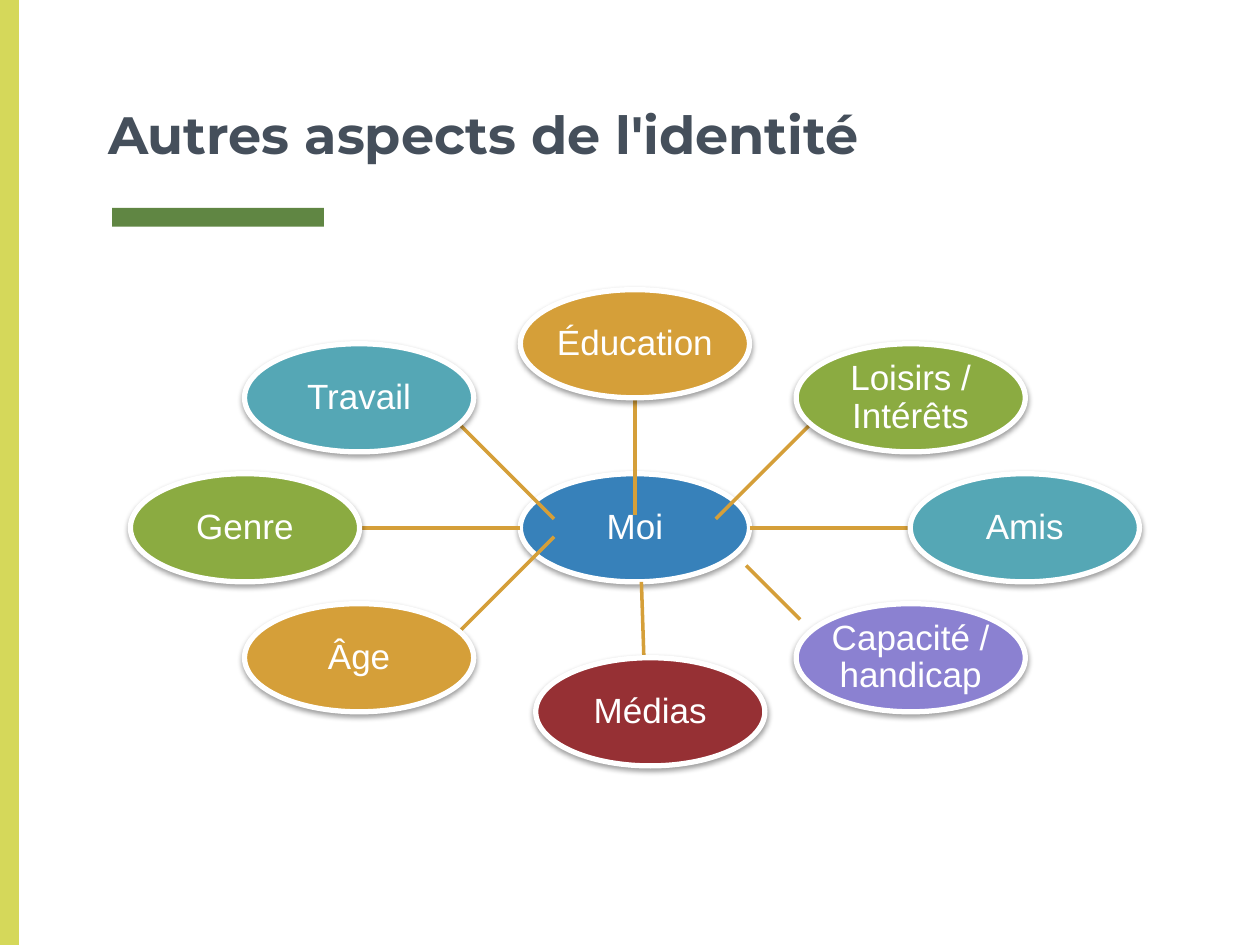
import pptx
import pptx.dml.color
import pptx.enum.shapes
import pptx.enum.text
import pptx.oxml
import pptx.oxml.ns
import pptx.oxml.xmlchemy
import pptx.util
from pptx.util import Cm

HUB_X, HUB_Y = 12.8, 10.64
NODE_W, NODE_H = 4.62, 2.18
GOLD, GREEN, TEAL, WHITE = "D59F39", "8BAB41", "55A7B5", "FFFFFF"

# Label, fill, node centre, link start and link end; cm from the hub centre
ASPECTS = [
    ("Éducation", GOLD, (0, -3.71), (0, -0.25), (0, -2.62)),
    ("Loisirs / Intérêts", GREEN, (5.56, -2.62), (1.63, -0.18), (3.91, -2.46)),
    ("Amis", TEAL, (7.86, 0), (2.31, 0), (5.54, 0)),
    ("Capacité / handicap", "8B81D1", (5.56, 2.62), (2.24, 0.76), (3.33, 1.85)),
    ("Médias", "963034", (0.31, 3.71), (0.13, 1.09), (0.18, 2.62)),
    ("Âge", GOLD, (-5.56, 2.62), (-1.63, 0.18), (-3.91, 2.46)),
    ("Genre", GREEN, (-7.86, 0), (-2.31, 0), (-5.54, 0)),
    ("Travail", TEAL, (-5.56, -2.62), (-1.63, -0.18), (-3.91, -2.46)),
]

SHADOW = (
    f'<a:outerShdw {pptx.oxml.ns.nsdecls("a")} blurRad="40000" dist="20000"'
    ' dir="5400000" rotWithShape="0"><a:srgbClr val="000000">'
    '<a:alpha val="38000"/></a:srgbClr></a:outerShdw>'
)


def rgb(value):
    return pptx.dml.color.RGBColor.from_string(value)


def format_text(tf, font, size, color, anchor, align, inset, bold=False):
    tf.word_wrap = True
    tf.auto_size = pptx.enum.text.MSO_AUTO_SIZE.NONE
    tf.vertical_anchor = anchor
    tf.margin_left = tf.margin_right = Cm(inset)
    tf.margin_top = tf.margin_bottom = Cm(inset)
    p = tf.paragraphs[0]
    p.alignment = align
    p.line_spacing = 0.9
    r = p.runs[0]
    r.font.name = font
    r.font.size = pptx.util.Pt(size)
    r.font.bold = bold
    r.font.color.rgb = rgb(color)


def add_bar(s, left, top, width, height, color):
    shape_type = pptx.enum.shapes.MSO_SHAPE.RECTANGLE
    sp = s.shapes.add_shape(shape_type, Cm(left), Cm(top), Cm(width), Cm(height))
    sp.shadow.inherit = False
    sp.fill.solid()
    sp.fill.fore_color.rgb = rgb(color)
    sp.line.fill.background()


def add_title(s, text):
    sp = s.shapes.title
    sp.left, sp.top, sp.width, sp.height = Cm(1.93), Cm(0), Cm(21.56), Cm(3.58)
    sp.text_frame.text = text
    format_text(sp.text_frame, "Montserrat", 30, "454F5B",
                pptx.enum.text.MSO_ANCHOR.BOTTOM,
                pptx.enum.text.PP_ALIGN.LEFT, 0.25, bold=True)
    sp.text_frame.paragraphs[0].line_spacing = 1.0


def add_node(s, text, color, dx=0, dy=0):
    sp = s.shapes.add_shape(
        pptx.enum.shapes.MSO_SHAPE.OVAL,
        Cm(HUB_X + dx - NODE_W / 2), Cm(HUB_Y + dy - NODE_H / 2),
        Cm(NODE_W), Cm(NODE_H))
    sp.fill.solid()
    sp.fill.fore_color.rgb = rgb(color)
    sp.line.color.rgb = rgb(WHITE)
    sp.line.width = pptx.util.Pt(3)
    sp.shadow.inherit = False
    effects = sp.element.spPr.find(pptx.oxml.ns.qn("a:effectLst"))
    effects.append(pptx.oxml.parse_xml(SHADOW))
    sp.text_frame.text = text
    format_text(sp.text_frame, "Arial", 20, WHITE,
                pptx.enum.text.MSO_ANCHOR.MIDDLE,
                pptx.enum.text.PP_ALIGN.CENTER, 0)


def add_link(s, start, end):
    (x1, y1), (x2, y2) = start, end
    link = s.shapes.add_connector(
        pptx.enum.shapes.MSO_CONNECTOR.STRAIGHT,
        Cm(HUB_X + x1), Cm(HUB_Y + y1), Cm(HUB_X + x2), Cm(HUB_Y + y2))
    link.line.color.rgb = rgb(GOLD)
    link.line.width = pptx.util.Pt(2)
    link.element.spPr.append(pptx.oxml.xmlchemy.OxmlElement("a:effectLst"))


def main():
    prs = pptx.Presentation()
    prs.slide_width, prs.slide_height = Cm(25.4), Cm(19.05)
    s = prs.slides.add_slide(prs.slide_layouts[5])

    # Accent bars and title
    add_bar(s, 2.26, 4.19, 4.27, 0.38, "608643")
    add_bar(s, 0, 0, 0.38, 19.05, "D5D85A")
    add_title(s, "Autres aspects de l'identité")

    # Hub, then each link beneath its own node
    add_node(s, "Moi", "3781BA")
    for text, color, centre, start, end in ASPECTS:
        add_link(s, start, end)
        add_node(s, text, color, *centre)

    prs.save("out.pptx")


if __name__ == "__main__":
    main()
